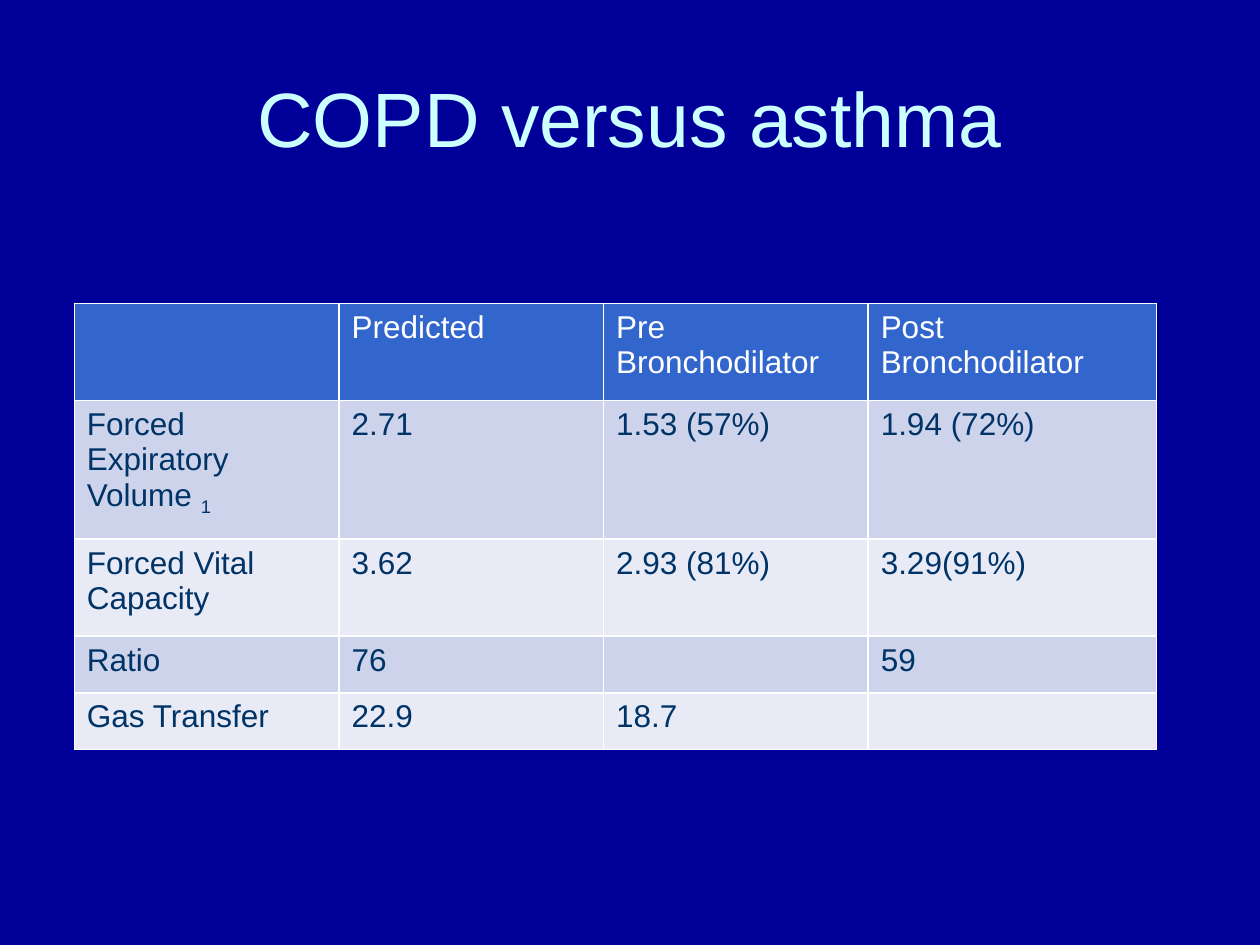
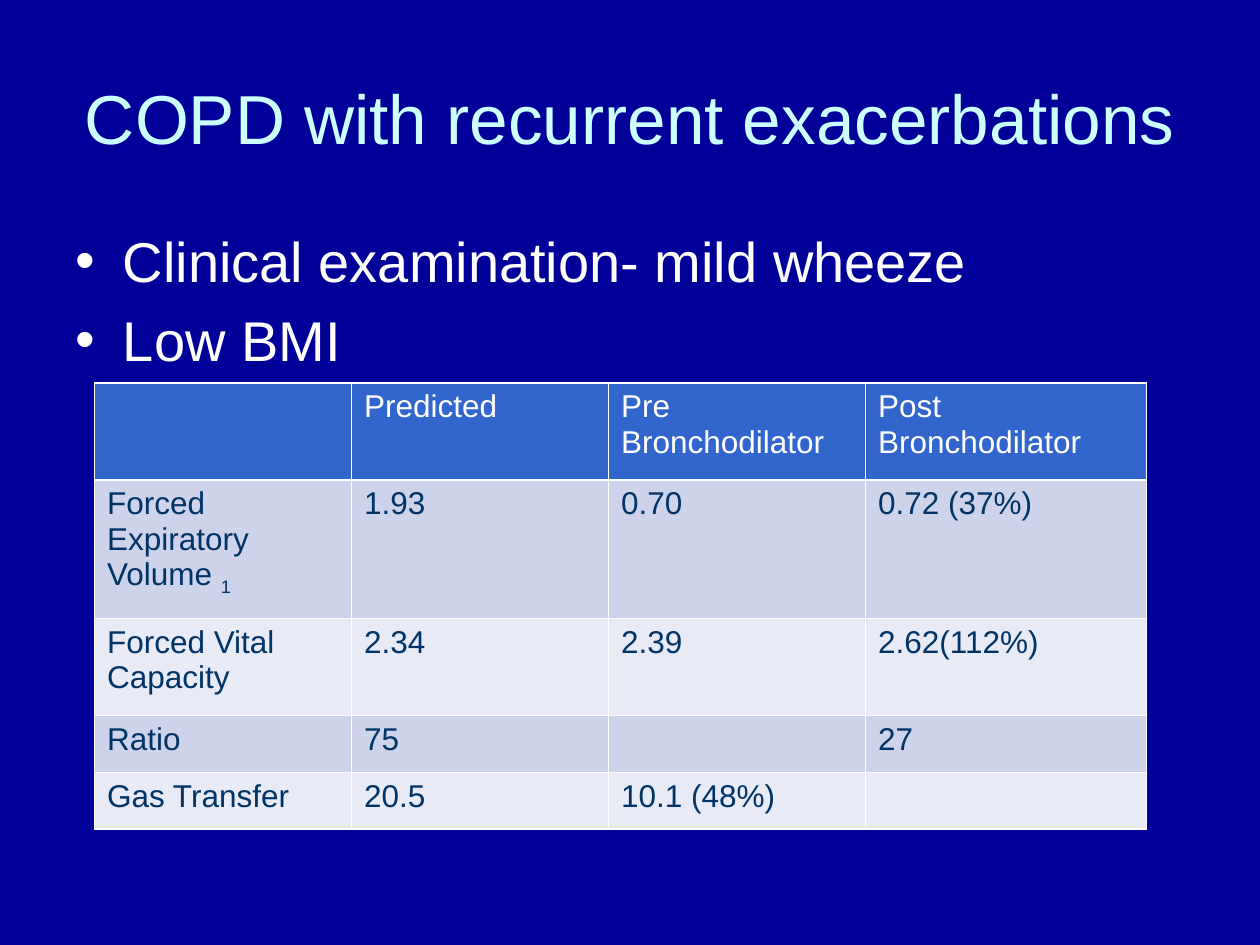
"""Build two slides of lung function results for COPD patients."""
from lxml.etree import SubElement
from pptx import Presentation
from pptx.dml.color import RGBColor
from pptx.enum.text import MSO_ANCHOR, MSO_AUTO_SIZE, PP_ALIGN
from pptx.oxml.ns import qn
from pptx.util import Inches, Pt

COLORS = {
    "background": "000099",
    "title": "CCFFFF",
    "light": "FFFFFF",
    "header": "3366CC",
    "odd_row": "CED3EC",
    "even_row": "E8EAF6",
    "reading": "003366",
}
FONT = "Arial"
ROW_HEIGHTS = [0.77, 1.1, 0.77, 0.45, 0.45]
HEADINGS = ["", "Predicted", "Pre Bronchodilator", "Post Bronchodilator"]
MEASURES = ["Forced Expiratory Volume ", "Forced Vital Capacity", "Ratio", "Gas Transfer"]
CASES = [
    {
        "title": "COPD versus asthma", "title_size": 44, "findings": [],
        "origin": (0.59, 2.41), "widths": [2.1, 2.1, 2.1, 2.29],
        "readings": [
            ["2.71", "1.53 (57%)", "1.94 (72%)"],
            ["3.62", "2.93 (81%)", "3.29(91%)"],
            ["76", "", "59"],
            ["22.9", "18.7", ""],
        ],
    },
    {
        "title": "COPD with recurrent exacerbations", "title_size": 39.6,
        "findings": ["Clinical examination- mild wheeze", "Low BMI"],
        "origin": (0.75, 3.04), "widths": [2.04, 2.04, 2.04, 2.23],
        "readings": [
            ["1.93", "0.70", "0.72 (37%)"],
            ["2.34", "2.39", "2.62(112%)"],
            ["75", "", "27"],
            ["20.5", "10.1 (48%)", ""],
        ],
    },
]


def style_text(paragraph, size, color):
    paragraph.font.name = FONT
    paragraph.font.size = Pt(size)
    paragraph.font.bold = False
    paragraph.font.color.rgb = RGBColor.from_string(COLORS[color])


def add_borders(cell):
    properties = cell._tc.get_or_add_tcPr()
    for position, side in enumerate(("lnL", "lnR", "lnT", "lnB")):
        line = SubElement(properties, qn(f"a:{side}"), w=str(Pt(1)))
        fill = SubElement(line, qn("a:solidFill"))
        SubElement(fill, qn("a:srgbClr"), val=COLORS["light"])
        properties.insert(position, line)


prs = Presentation()
prs.slide_width = Inches(10)
prs.slide_height = Inches(7.5)
background = prs.slide_master.background.fill
background.solid()
background.fore_color.rgb = RGBColor.from_string(COLORS["background"])

for case in CASES:
    layout = prs.slide_layouts[1 if case["findings"] else 5]
    slide = prs.slides.add_slide(layout)

    title = slide.shapes.title
    title.left, title.top, title.width, title.height = map(Inches, (0.5, 0.3, 9, 1.25))
    title.text_frame.text = case["title"]
    title.text_frame.auto_size = MSO_AUTO_SIZE.NONE
    title.text_frame.vertical_anchor = MSO_ANCHOR.MIDDLE
    title.text_frame.paragraphs[0].alignment = PP_ALIGN.CENTER
    style_text(title.text_frame.paragraphs[0], case["title_size"], "title")

    if case["findings"]:
        findings = slide.placeholders[1]
        findings.left, findings.top, findings.width, findings.height = map(
            Inches, (0.5, 1.75, 9, 4.95))
        findings.text_frame.text = "\n".join(case["findings"])
        findings.text_frame.auto_size = MSO_AUTO_SIZE.NONE
        for finding in findings.text_frame.paragraphs:
            style_text(finding, 32, "light")

    rows = [HEADINGS] + [[measure, *readings]
                         for measure, readings in zip(MEASURES, case["readings"])]
    left, top = case["origin"]
    results = slide.shapes.add_table(
        len(rows), len(HEADINGS), Inches(left), Inches(top),
        Inches(sum(case["widths"])), Inches(sum(ROW_HEIGHTS))).table
    for column, width in zip(results.columns, case["widths"]):
        column.width = Inches(width)
    for row, height in zip(results.rows, ROW_HEIGHTS):
        row.height = Inches(height)

    for row_index, row in enumerate(rows):
        band = "header" if row_index == 0 else "odd_row" if row_index % 2 else "even_row"
        for column_index, text in enumerate(row):
            cell = results.cell(row_index, column_index)
            cell.fill.solid()
            cell.fill.fore_color.rgb = RGBColor.from_string(COLORS[band])
            add_borders(cell)
            if text:
                cell.text = text
                style_text(cell.text_frame.paragraphs[0], 18,
                           "reading" if row_index else "light")

    subscript = results.cell(1, 0).text_frame.paragraphs[0].add_run()
    subscript.text = "1"
    subscript._r.get_or_add_rPr().set("baseline", "-25000")

prs.save("out.pptx")
